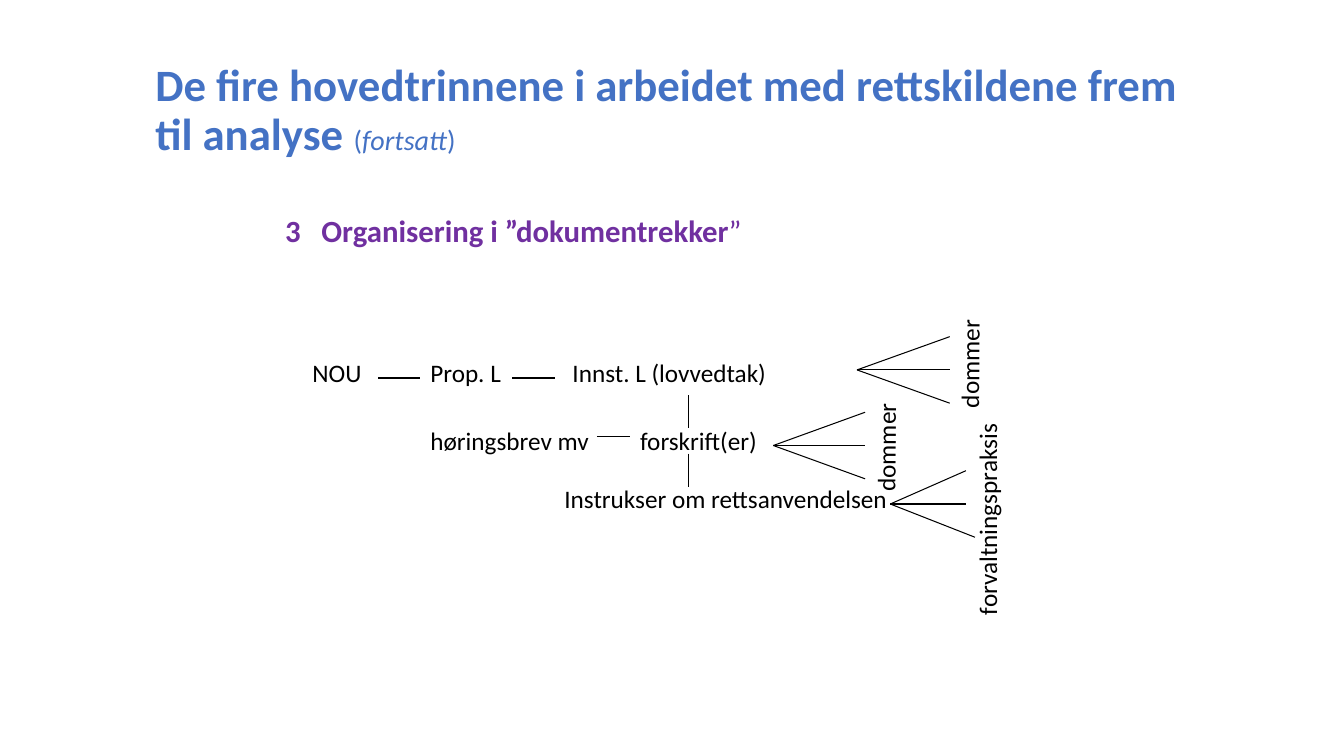
from lxml.etree import SubElement
from pptx import Presentation
from pptx.dml.color import RGBColor
from pptx.enum.shapes import MSO_CONNECTOR as Connector
from pptx.enum.text import MSO_ANCHOR as Anchor, MSO_AUTO_SIZE as AutoSize, PP_ALIGN as Align
from pptx.oxml.ns import qn
from pptx.util import Inches, Pt

BLUE = RGBColor(0x44, 0x72, 0xC4)
PURPLE = RGBColor(0x70, 0x30, 0xA0)
BLACK = RGBColor(0, 0, 0)


class SlideBuilder:
    font = "Calibri"
    label_size = 18
    label_height = 0.4
    line_width = 0.75

    def __init__(self, slide):
        self.slide = slide

    def add_run(self, paragraph, text, size, color, bold=False, italic=False):
        run = paragraph.add_run()
        run.text = text
        run.font.name = self.font
        run.font.size = Pt(size)
        run.font.color.rgb = color
        run.font.bold = bold
        run.font.italic = italic

    def title(self, left, top, width, height, runs):
        shape = self.slide.shapes.title
        shape.left, shape.top = Inches(left), Inches(top)
        shape.width, shape.height = Inches(width), Inches(height)
        frame = shape.text_frame
        frame.auto_size = AutoSize.NONE
        frame.word_wrap = True
        frame.vertical_anchor = Anchor.MIDDLE
        paragraph = frame.paragraphs[0]
        paragraph.alignment = Align.LEFT
        paragraph.line_spacing = 0.9
        for text, size, bold, italic in runs:
            self.add_run(paragraph, text, size, BLUE, bold, italic)

    def text_box(self, left, top, width, height, rotation=0):
        shape = self.slide.shapes.add_textbox(
            Inches(left), Inches(top), Inches(width), Inches(height))
        shape.rotation = rotation
        frame = shape.text_frame
        frame.word_wrap = False
        frame.auto_size = AutoSize.SHAPE_TO_FIT_TEXT
        return frame.paragraphs[0]

    def heading(self, left, top, width, height, indent, runs):
        paragraph = self.text_box(left, top, width, height)
        properties = paragraph._p.get_or_add_pPr()
        properties.set("marL", str(Inches(indent)))
        properties.set("indent", str(-Inches(indent)))
        for text, bold in runs:
            self.add_run(paragraph, text, 22, PURPLE, bold)

    def label(self, text, left, top, width, rotation=0):
        paragraph = self.text_box(left, top, width, self.label_height, rotation)
        self.add_run(paragraph, text, self.label_size, BLACK)

    def line(self, x1, y1, x2, y2):
        connector = self.slide.shapes.add_connector(
            Connector.STRAIGHT, Inches(x1), Inches(y1), Inches(x2), Inches(y2))
        connector.line.color.rgb = BLACK
        connector.line.width = Pt(self.line_width)
        SubElement(connector._element.spPr, qn("a:effectLst"))

    def fan(self, x, y, ends):
        for end_x, rise in zip(ends, (-0.33, 0, 0.33)):
            self.line(x, y, end_x, y + rise)


def main():
    presentation = Presentation()
    presentation.slide_width = Inches(13.33)
    presentation.slide_height = Inches(7.5)
    slide = presentation.slides.add_slide(presentation.slide_layouts[5])
    builder = SlideBuilder(slide)

    builder.title(1.44, 0.38, 10.71, 1.45, [
        ("De fire hovedtrinnene i arbeidet med rettskildene frem til analyse ", 32, True, False),
        ("(", 20, False, False),
        ("fortsatt", 20, False, True),
        (")", 20, False, False),
    ])
    builder.heading(2.73, 2.05, 4.78, 0.47, 0.36, [
        ("3\tOrganisering i ”dokumentrekker", True), ("”", False)])

    for text, left, top, width in [
        ("NOU", 3, 3.5, 0.69),
        ("Prop. L", 4.17, 3.5, 0.91),
        ("Innst. L (lovvedtak)", 5.58, 3.5, 2.14),
        ("høringsbrev mv", 4.17, 4.17, 1.78),
        ("forskrift(er)", 6.25, 4.17, 1.38),
        ("Instrukser om rettsanvendelsen", 5.5, 4.75, 3.44),
    ]:
        builder.label(text, left, top, width)

    for left, right, y in [(3.75, 4.17, 3.75), (5.08, 5.5, 3.75), (5.92, 6.25, 4.33)]:
        builder.line(left, y, right, y)
    for top in (3.92, 4.5):
        builder.line(6.83, top, 6.83, top + 0.33)

    builder.fan(8.5, 3.67, [9.42] * 3)
    builder.fan(7.67, 4.42, [8.58] * 3)
    builder.fan(8.83, 5, [9.58, 9.58, 9.67])

    builder.label("dommer", 9.07, 3.4, 1.09, 270.3)
    builder.label("dommer", 8.24, 4.23, 1.09, 270.3)
    builder.label("forvaltningspraksis", 8.73, 4.94, 2.12, 270)

    presentation.save("out.pptx")


if __name__ == "__main__":
    main()
